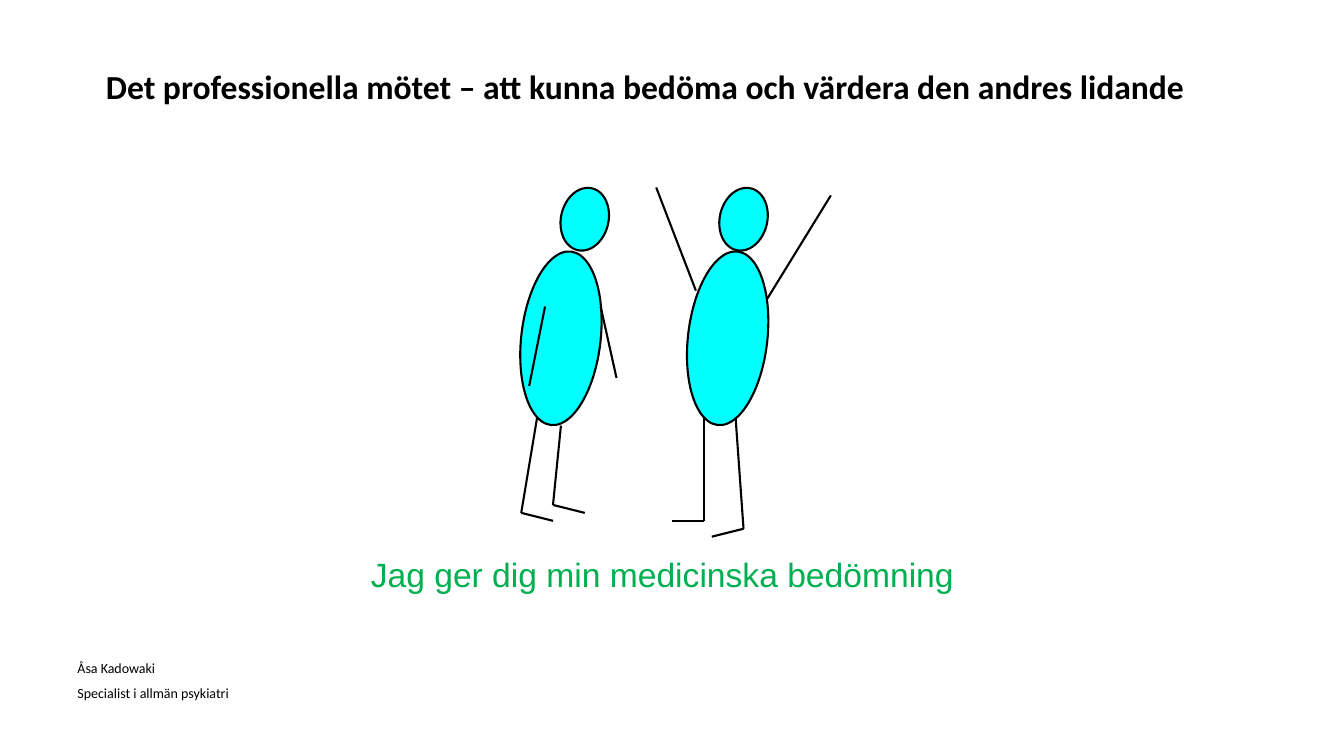
"""Build a slide with two stick figures that meet, a heading and a caption."""
from dataclasses import dataclass

from lxml import etree
from pptx import Presentation
from pptx.dml.color import RGBColor
from pptx.enum.shapes import MSO_CONNECTOR, MSO_SHAPE
from pptx.enum.text import MSO_ANCHOR, MSO_AUTO_SIZE, PP_ALIGN
from pptx.oxml.ns import qn
from pptx.shapes.base import BaseShape
from pptx.shapes.group import GroupShape
from pptx.slide import Slide
from pptx.util import Cm, Inches, Pt

OVAL = MSO_SHAPE.OVAL
STRAIGHT = MSO_CONNECTOR.STRAIGHT
LEFT = PP_ALIGN.LEFT
TOP = MSO_ANCHOR.TOP
FIT_SHAPE = MSO_AUTO_SIZE.SHAPE_TO_FIT_TEXT
TITLE_ONLY = 5

CELL = Cm(0.2)
GRID_LEFT = Inches(5.17)
GRID_TOP = Inches(1.86)


@dataclass(frozen=True)
class Theme:
    """Colours, fonts and sizes of the slide."""
    ink: RGBColor = RGBColor(0, 0, 0)
    skin: RGBColor = RGBColor(0, 255, 255)
    accent: RGBColor = RGBColor(0, 176, 80)
    heading_font: str = "Calibri"
    caption_font: str = "Arial"
    large: int = 24
    small: int = 10
    outline: float = 1.5


@dataclass(frozen=True)
class Oval:
    """A tilted ellipse, measured in grid cells."""
    column: int
    row: int
    columns: int
    rows: int
    tilt: float


@dataclass(frozen=True)
class Figure:
    """A person: head and torso columns, and limbs as chains of grid points."""
    head_column: int
    torso_column: int
    limbs: tuple[tuple[tuple[int, int], ...], ...]


@dataclass(frozen=True)
class Label:
    """Place, words and look of a text, with its place in inches."""
    left: float
    top: float
    width: float
    height: float
    text: str
    font: str
    size: int
    colour: RGBColor
    bold: bool = False
    space_before: int = 0


THEME = Theme()

FIGURES = (
    Figure(5, 0, (
        ((2, 29), (0, 41), (4, 42)),
        ((5, 30), (4, 40), (8, 41)),
        ((10, 15), (12, 24)),
        ((3, 15), (1, 25)),
    )),
    Figure(25, 21, (
        ((39, 1), (31, 14)),
        ((17, 0), (22, 13)),
        ((23, 29), (23, 42), (19, 42)),
        ((27, 29), (28, 43), (24, 44)),
    )),
)

HEADING = Label(0.95, 0.6, 11.36, 0.5,
                "Det professionella mötet – att kunna bedöma och värdera den andres lidande",
                THEME.heading_font, THEME.large, THEME.ink, bold=True)
LABELS = (
    Label(0.67, 6.49, 2.2, 0.52, "Åsa Kadowaki\nSpecialist i allmän psykiatri",
          THEME.heading_font, THEME.small, THEME.ink, space_before=6),
    Label(3.58, 5.45, 9.67, 0.5, "Jag ger dig min medicinska bedömning",
          THEME.caption_font, THEME.large, THEME.accent),
)


def grid_point(column: int, row: int) -> tuple[int, int]:
    """Return the slide position of a grid point."""
    return GRID_LEFT + column * CELL, GRID_TOP + row * CELL


def draw_oval(group: GroupShape, oval: Oval) -> None:
    """Draw a filled and outlined ellipse."""
    shape = group.shapes.add_shape(OVAL, *grid_point(oval.column, oval.row),
                                   oval.columns * CELL, oval.rows * CELL)
    shape.rotation = oval.tilt
    shape.shadow.inherit = False
    shape.fill.solid()
    shape.fill.fore_color.rgb = THEME.skin
    shape.line.color.rgb = THEME.ink
    shape.line.width = Pt(THEME.outline)


def draw_limb(group: GroupShape, points: tuple[tuple[int, int], ...]) -> None:
    """Draw a chain of straight lines through the points."""
    for start, end in zip(points, points[1:]):
        bone = group.shapes.add_connector(STRAIGHT, *grid_point(*start), *grid_point(*end))
        bone.line.color.rgb = THEME.ink
        bone.line.width = Pt(THEME.outline)
        etree.SubElement(bone._element.spPr, qn("a:effectLst"))


def draw_figure(page: Slide, figure: Figure) -> None:
    """Draw one person as a group."""
    group = page.shapes.add_group_shape()
    draw_oval(group, Oval(figure.torso_column, 8, 10, 22, 6.6))
    draw_oval(group, Oval(figure.head_column, 0, 6, 8, 13))
    for limb in figure.limbs:
        draw_limb(group, limb)


def write_label(box: BaseShape, label: Label) -> None:
    """Place a text shape, fill in its words and format them."""
    box.left, box.top = Inches(label.left), Inches(label.top)
    box.width, box.height = Inches(label.width), Inches(label.height)
    frame = box.text_frame
    frame.text = label.text
    frame.word_wrap = True
    frame.auto_size = FIT_SHAPE
    frame.vertical_anchor = TOP
    for para in frame.paragraphs:
        para.alignment = LEFT
        para.space_before = Pt(label.space_before)
        for span in para.runs:
            span.font.name = label.font
            span.font.size = Pt(label.size)
            span.font.bold = label.bold
            span.font.color.rgb = label.colour


def main() -> None:
    """Build and save the deck."""
    deck = Presentation()
    deck.slide_width, deck.slide_height = Inches(13.33), Inches(7.5)
    page = deck.slides.add_slide(deck.slide_layouts[TITLE_ONLY])
    for figure in FIGURES:
        draw_figure(page, figure)
    write_label(page.shapes.title, HEADING)
    for label in LABELS:
        write_label(page.shapes.add_textbox(0, 0, 0, 0), label)
    deck.save("out.pptx")


if __name__ == "__main__":
    main()
